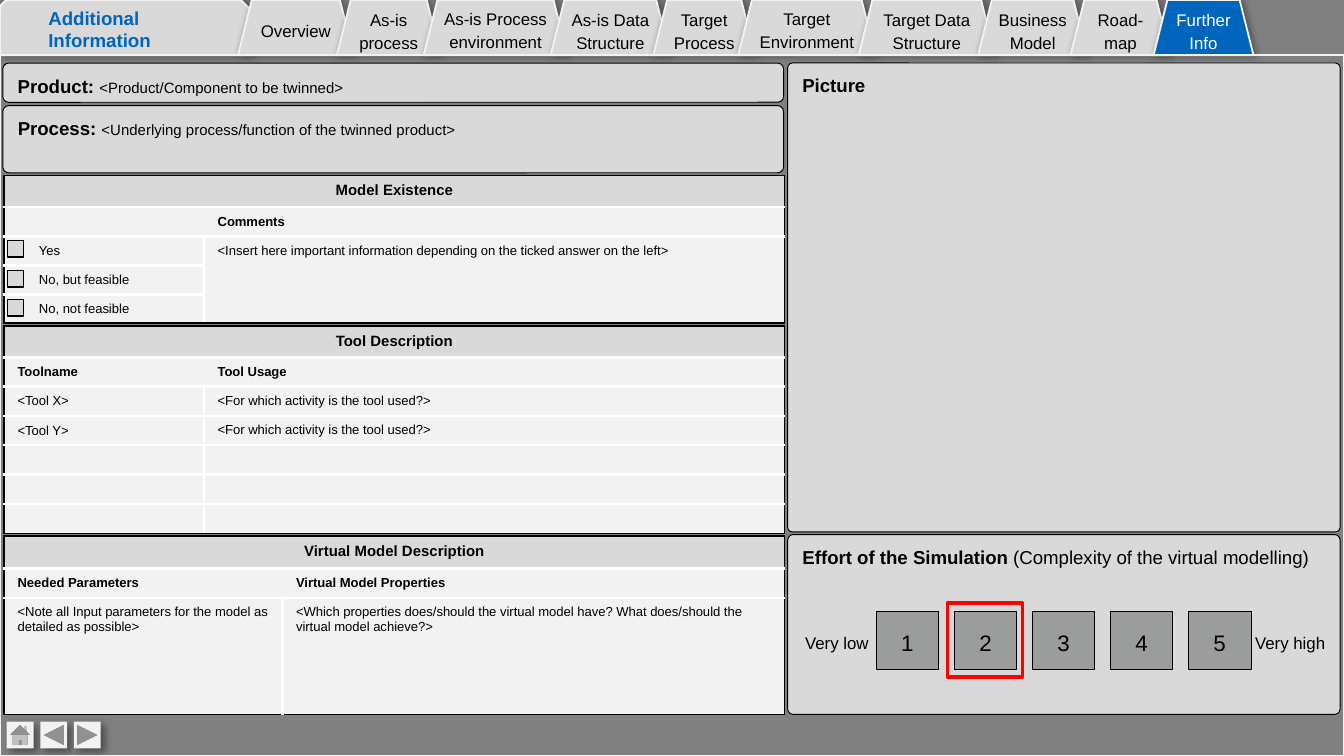
from lxml import etree
from pptx import Presentation
from pptx.dml.color import RGBColor
from pptx.enum.shapes import MSO_SHAPE
from pptx.enum.text import MSO_ANCHOR, MSO_AUTO_SIZE, PP_ALIGN
from pptx.oxml.ns import qn
from pptx.util import Pt

RECT, ROUNDED = MSO_SHAPE.RECTANGLE, MSO_SHAPE.ROUNDED_RECTANGLE
TAB, CORNER = MSO_SHAPE.TRAPEZOID, MSO_SHAPE.SNIP_ROUND_RECTANGLE
HOME = MSO_SHAPE.ACTION_BUTTON_HOME
BACK = MSO_SHAPE.ACTION_BUTTON_BACK_OR_PREVIOUS
NEXT = MSO_SHAPE.ACTION_BUTTON_FORWARD_OR_NEXT
TOP, MIDDLE = MSO_ANCHOR.TOP, MSO_ANCHOR.MIDDLE
LEFT, CENTER = PP_ALIGN.LEFT, PP_ALIGN.CENTER

COLORS = {
    "backdrop": "808080", "panel": "D9D9D9", "light": "F2F2F2", "blue": "0065BD",
    "black": "000000", "white": "FFFFFF", "grade": "9B9C9C", "red": "FF0000",
}
NO_STYLE = "{2D5ABB26-0587-4C30-8999-92F81FD0307C}"


def write(paragraph, runs, color="black", align=LEFT, spacing=1.14):
    """Fill a paragraph with (text, size, bold) runs."""
    paragraph.alignment = align
    paragraph.line_spacing = spacing
    for text, size, bold in runs:
        run = paragraph.add_run()
        run.text = text
        for name, value in {"name": "Arial", "size": Pt(size), "bold": bold}.items():
            setattr(run.font, name, value)
        run.font.color.rgb = RGBColor.from_string(COLORS[color])


def add_box(shapes, kind, place, fill=None, line=None, weight=1, shadow=None):
    """Draw a shape; shadow is (distance in points, angle in degrees)."""
    box = shapes.add_shape(kind, *[Pt(v) for v in place])
    box.shadow.inherit = False
    if fill:
        box.fill.solid()
        box.fill.fore_color.rgb = RGBColor.from_string(COLORS[fill])
    else:
        box.fill.background()
    if line:
        box.line.color.rgb = RGBColor.from_string(COLORS[line])
        box.line.width = Pt(weight)
    else:
        box.line.fill.background()
    if shadow:
        effects = box._element.spPr.find(qn("a:effectLst"))
        outer = etree.SubElement(effects, qn("a:outerShdw"), blurRad=str(Pt(4)),
                                 dist=str(Pt(shadow[0])), dir=str(shadow[1] * 60000),
                                 algn="tl", rotWithShape="0")
        tint = etree.SubElement(outer, qn("a:srgbClr"), val=COLORS["black"])
        etree.SubElement(tint, qn("a:alpha"), val="40000")
    box.text_frame.word_wrap = True
    box.text_frame.vertical_anchor = TOP
    return box


prs = Presentation()
prs.slide_width, prs.slide_height = Pt(720), Pt(405)
slide = prs.slides.add_slide(prs.slide_layouts[5])
shapes = slide.shapes
slide.background.fill.solid()
slide.background.fill.fore_color.rgb = RGBColor.from_string(COLORS["backdrop"])

# Heading on its corner tab
corner = add_box(shapes, CORNER, (0, 0, 134.6, 29.5), "panel", "light", shadow=(1, 0))
corner.adjustments[0], corner.adjustments[1] = 0.17, 0.19
heading = shapes.title
heading.left, heading.top, heading.width, heading.height = Pt(18.7), Pt(0), Pt(123.8), Pt(31.7)
heading_frame = heading.text_frame
heading_frame.auto_size = MSO_AUTO_SIZE.NONE
heading_frame.vertical_anchor = TOP
write(heading_frame.paragraphs[0], [("Additional", 10, True)], "blue", spacing=1)
write(heading_frame.add_paragraph(), [("Information", 10, True)], "blue", spacing=1)
shapes._spTree.append(heading._element)

# Navigation buttons
for i, button in enumerate((HOME, BACK, NEXT)):
    add_box(shapes, button, (3.6 + 18 * i, 386.6, 14.4, 14.4), "light", shadow=(3, 45))

# Tabs, each overlapping the one before
TAB_OVERLAP = 9
TAB_INSETS = {"margin_left": Pt(5.8), "margin_right": Pt(5.8),
              "margin_top": Pt(2.9), "margin_bottom": Pt(2.9)}
tabs = [("Overview", 62), ("As-is process", 55.5), ("As-is Process environment", 77),
        ("As-is Data Structure", 64), ("Target Process", 54.5),
        ("Target Environment", 73.5), ("Target Data Structure", 73),
        ("Business Model", 58.5), ("Road-map", 53.5), ("Further Info", 53.5)]
tab_left = 127.5
for label, width in tabs:
    active = label == "Further Info"
    tab = add_box(shapes, TAB, (tab_left, 0, width, 29.5),
                  "blue" if active else "panel", "light", shadow=(1, 0))
    for name, value in TAB_INSETS.items():
        setattr(tab.text_frame, name, value)
    tab.text_frame.vertical_anchor = MIDDLE
    write(tab.text_frame.paragraphs[0], [(label, 9, False)],
          "white" if active else "black", CENTER)
    tab_left += width - TAB_OVERLAP

# Frame of the page
add_box(shapes, RECT, (0, 29.5, 720, 375.5), line="light")

# Rounded panels
panels = [
    ((1.5, 33.8, 418.3, 21), 0.15,
     [("Product: ", 10, True), ("<Product/Component to be twinned>", 8, False)]),
    ((1.5, 56.6, 418.3, 36), 0.09,
     [("Process: ", 10, True),
      ("<Underlying process/function of the twinned product>", 8, False)]),
    ((422, 33.8, 295.9, 251.2), 0.01, [("Picture", 10, True)]),
    ((422, 286.4, 295.9, 96.3), 0.03,
     [("Effort of the Simulation ", 10, True),
      ("(Complexity of the virtual modelling)", 10, False)]),
]
for place, rounding, runs in panels:
    panel = add_box(shapes, ROUNDED, place, "panel", "black", 0.5)
    panel.adjustments[0] = rounding
    write(panel.text_frame.paragraphs[0], runs)

# Tables: top, column widths, row heights, texts, rows with middle-anchored first column
usage = "<For which activity is the tool used?>"
tables = [
    (94, (107.2, 311), [17] + [15.5] * 4,
     [("Model Existence", ""), ("", "Comments"),
      ("Yes", "<Insert here important information depending on the ticked answer on the left>"),
      ("No, but feasible", ""), ("No, not feasible", "")]),
    (174.5, (107.2, 311), [17] + [15.7] * 6,
     [("Tool Description", ""), ("Toolname", "Tool Usage"), ("<Tool X>", usage),
      ("<Tool Y>", usage), ("", ""), ("", ""), ("", "")]),
    (287, (149.2, 269), [17.5, 16, 62.2],
     [("Virtual Model Description", ""), ("Needed Parameters", "Virtual Model Properties"),
      ("<Note all Input parameters for the model as detailed as possible>",
       "<Which properties does/should the virtual model have? "
       "What does/should the virtual model achieve?>")]),
]
for top, widths, heights, texts in tables:
    table = shapes.add_table(len(heights), 2, Pt(2.2), Pt(top), Pt(sum(widths)),
                             Pt(sum(heights))).table
    table._tbl.tblPr.find(qn("a:tableStyleId")).text = NO_STYLE
    table.first_row = table.horz_banding = False
    for column, width in zip(table.columns, widths):
        column.width = Pt(width)
    for row, height in zip(table.rows, heights):
        row.height = Pt(height)
    table.cell(0, 0).merge(table.cell(0, 1))
    has_checkboxes = texts[0][0] == "Model Existence"
    if has_checkboxes:
        table.cell(2, 1).merge(table.cell(4, 1))

    for r, row_texts in enumerate(texts):
        for c, text in enumerate(row_texts):
            cell = table.cell(r, c)
            if cell.is_spanned:
                continue
            # Black round the outside, white between the cells
            at_right = c + cell.span_width == 2
            at_bottom = r + cell.span_height == len(texts)
            outside = {"lnL": c == 0, "lnR": at_right, "lnT": r == 0, "lnB": at_bottom}
            for side, is_outer in outside.items():
                if r == 1 and side in ("lnL", "lnR") and not is_outer:
                    continue
                edge = etree.SubElement(cell._tc.get_or_add_tcPr(), qn("a:" + side),
                                        w=str(Pt(1 if is_outer else 1.5)))
                ink = etree.SubElement(edge, qn("a:solidFill"))
                etree.SubElement(ink, qn("a:srgbClr"),
                                 val=COLORS["black" if is_outer else "white"])
            cell.fill.solid()
            cell.fill.fore_color.rgb = RGBColor.from_string(
                COLORS["panel" if r == 0 else "light"])
            if r == 1 or (r > 1 and c == 0 and len(texts) > 3):
                cell.vertical_anchor = MIDDLE
            if has_checkboxes and r > 1 and c == 0:
                cell.margin_left = Pt(18.7)
            paragraph = cell.text_frame.paragraphs[0]
            if text:
                write(paragraph, [(text, 8 if r == 0 else 7, r < 2)],
                      align=CENTER if r == 0 else LEFT, spacing=1)
            else:
                etree.SubElement(paragraph._p, qn("a:endParaRPr"), sz="700")

# Checkboxes
for checkbox_top in (128.9, 145.1, 160.6):
    add_box(shapes, RECT, (4, checkbox_top, 8.8, 8.8), "panel", "black", 0.75)

# Effort scale
scale = shapes.add_group_shape().shapes
for i in range(5):
    grade = add_box(scale, RECT, (469.4 + 41.8 * i, 327.6, 33.5, 31), "grade", "black", 0.25)
    grade.text_frame.vertical_anchor = MIDDLE
    write(grade.text_frame.paragraphs[0], [(str(i + 1), 12, False)], align=CENTER)
add_box(shapes, RECT, (507.6, 323.1, 40.2, 39.8), line="red", weight=2)

for label, left, width in (("Very low", 431.3, 34.6), ("Very high", 672.4, 38.2)):
    scale_end = add_box(shapes, RECT, (left, 337.3, width, 11.8), "panel").text_frame
    for side in ("left", "right", "top", "bottom"):
        setattr(scale_end, "margin_" + side, 0)
    scale_end.word_wrap = False
    write(scale_end.paragraphs[0], [(label, 9, False)])

prs.save("out.pptx")
